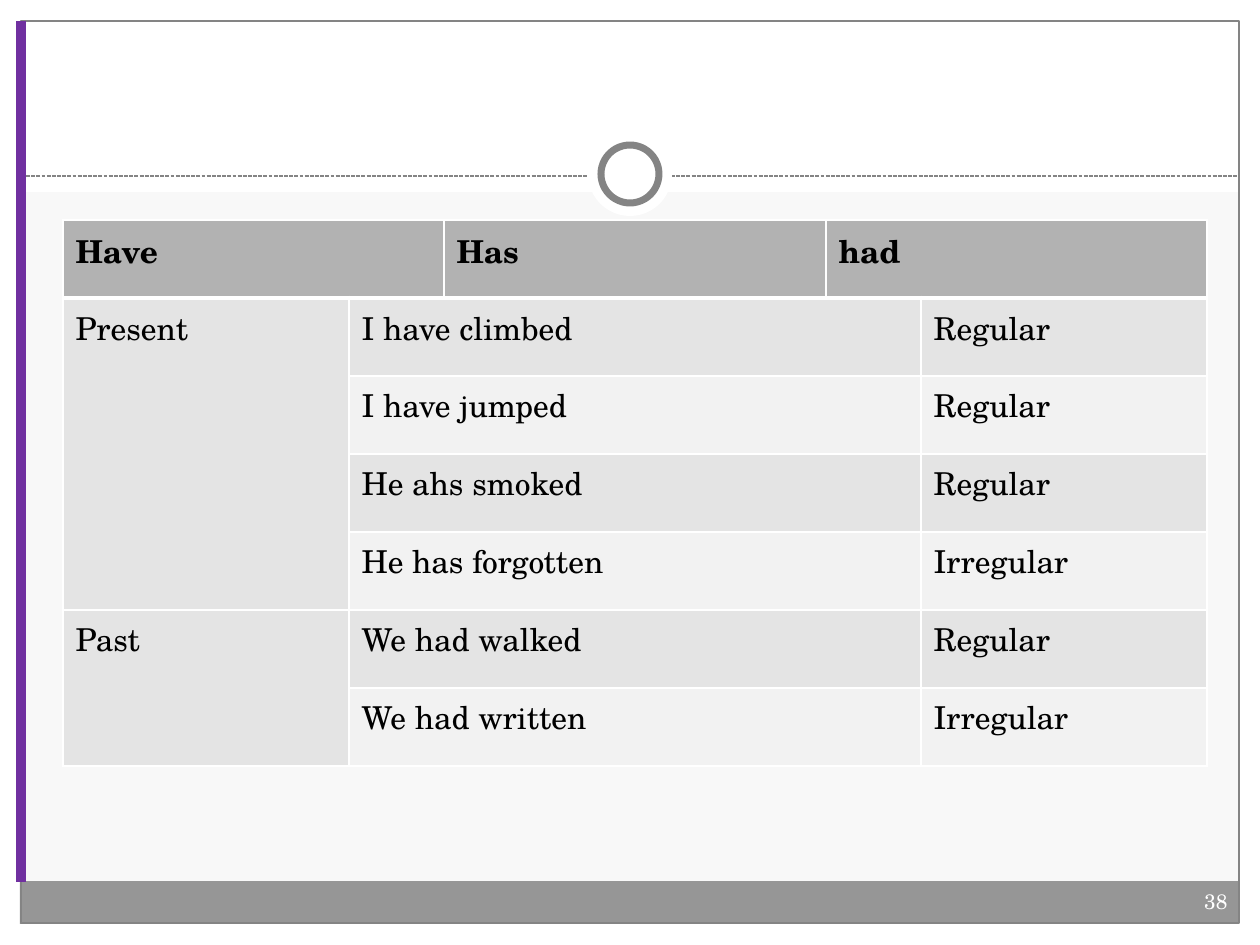
from lxml import etree
from pptx import Presentation
from pptx import util as u
from pptx.dml.color import RGBColor
from pptx.enum import dml, shapes, text
from pptx.oxml.ns import qn

FONT = "TeX Gyre Schola"
WHITE, GREY, DARK, LIGHT = "FFFFFF", "848484", "E4E4E4", "F2F2F2"
HEADS = [("Have", 0, 1), ("Has", 2, 2), ("had", 3, 4)]
TENSES = [
    ("Present", [
        ("I have climbed", "Regular"),
        ("I have jumped", "Regular"),
        ("He ahs smoked", "Regular"),
        ("He has forgotten", "Irregular"),
    ]),
    ("Past", [
        ("We had walked", "Regular"),
        ("We had written", "Irregular"),
    ]),
]
COLS = [286, 95, 382, 95, 286]
ROW = 78
OVAL, RECT = shapes.MSO_SHAPE.OVAL, shapes.MSO_SHAPE.RECTANGLE
FRAME = [
    (RECT, (0, 924, 1260, 21), WHITE, None, 0),
    (RECT, (0, 0, 1260, 192), WHITE, None, 0),
    (RECT, (0, 0, 21, 945), WHITE, None, 0),
    (RECT, (1239, 0, 21, 945), WHITE, None, 0),
    (RECT, (20, 881, 1218, 43), "969696", None, 0),
    (RECT, (21, 21, 1218, 902), None, GREY, 0.75),
]
RING = [
    (OVAL, (588, 132, 84, 84), WHITE, None, 0),
    (OVAL, (601, 145, 58, 58), WHITE, GREY, 4),
]


def px(n):
    return round(n * 914400 / 126)


def paint(fill, tone):
    if tone:
        fill.solid()
        fill.fore_color.rgb = RGBColor.from_string(tone)
    else:
        fill.background()


def shape(slide, kind, box, tone, edge, width):
    item = slide.shapes.add_shape(kind, *map(px, box))
    item.shadow.inherit = False
    paint(item.fill, tone)
    paint(item.line.fill, edge)
    if edge:
        item.line.width = u.Pt(width)


def line(slide, ends, tone, width, dash=None):
    item = slide.shapes.add_connector(shapes.MSO_CONNECTOR.STRAIGHT, *map(px, ends))
    paint(item.line.fill, tone)
    item.line.width = u.Pt(width)
    if dash:
        item.line.dash_style = dash
    etree.SubElement(item._element.spPr, qn("a:effectLst"))


def write(frame, words, size, tone, bold=False):
    run = frame.paragraphs[0].add_run()
    run.text = words
    run.font.name, run.font.size, run.font.bold = FONT, u.Pt(size), bold
    run.font.color.rgb = RGBColor.from_string(tone)


def edges(cell, base):
    props = cell._tc.get_or_add_tcPr()
    for i, side in enumerate(("lnL", "lnR", "lnT", "lnB")):
        width = base if side == "lnB" else 1
        edge = etree.Element(qn("a:" + side), w=str(u.Pt(width)))
        solid = etree.SubElement(edge, qn("a:solidFill"))
        etree.SubElement(solid, qn("a:srgbClr"), val=WHITE)
        props.insert(i, edge)


def put(grid, words, start, end, bold=False):
    cell = grid.cell(*start)
    if start != end:
        cell.merge(grid.cell(*end))
    write(cell.text_frame, words, 18, "000000", bold)


def verbs(slide):
    count = 1 + sum(len(rows) for _, rows in TENSES)
    size = map(px, (63, 220, sum(COLS), count * ROW))
    grid = slide.shapes.add_table(count, len(COLS), *size).table
    for col, width in zip(grid.columns, COLS):
        col.width = px(width)
    for r, row in enumerate(grid.rows):
        row.height = px(ROW)
        for c, cell in enumerate(row.cells):
            tone = "B2B2B2" if r == 0 else DARK if r % 2 or c == 0 else LIGHT
            paint(cell.fill, tone)
            edges(cell, 1 if r else 3)
    for words, first, last in HEADS:
        put(grid, words, (0, first), (0, last), True)
    top = 1
    for tense, rows in TENSES:
        put(grid, tense, (top, 0), (top + len(rows) - 1, 0))
        for r, (words, sort) in enumerate(rows, top):
            put(grid, words, (r, 1), (r, 3))
            put(grid, sort, (r, 4), (r, 4))
        top += len(rows)


def main():
    deck = Presentation()
    deck.slide_width, deck.slide_height = px(1260), px(945)
    slide = deck.slides.add_slide(deck.slide_layouts[6])
    paint(slide.background.fill, "F8F8F8")
    for part in FRAME:
        shape(slide, *part)
    line(slide, (21, 176, 1239, 176), GREY, 0.75, dml.MSO_LINE.SQUARE_DOT)
    for part in RING:
        shape(slide, *part)
    frame = slide.shapes.add_textbox(*map(px, (746, 882, 494, 50))).text_frame
    frame.word_wrap = True
    frame.paragraphs[0].alignment = text.PP_ALIGN.RIGHT
    write(frame, "38", 12, WHITE)
    line(slide, (21, 21, 21, 882), "7030A0", 6)
    verbs(slide)
    deck.save("out.pptx")


if __name__ == "__main__":
    main()
